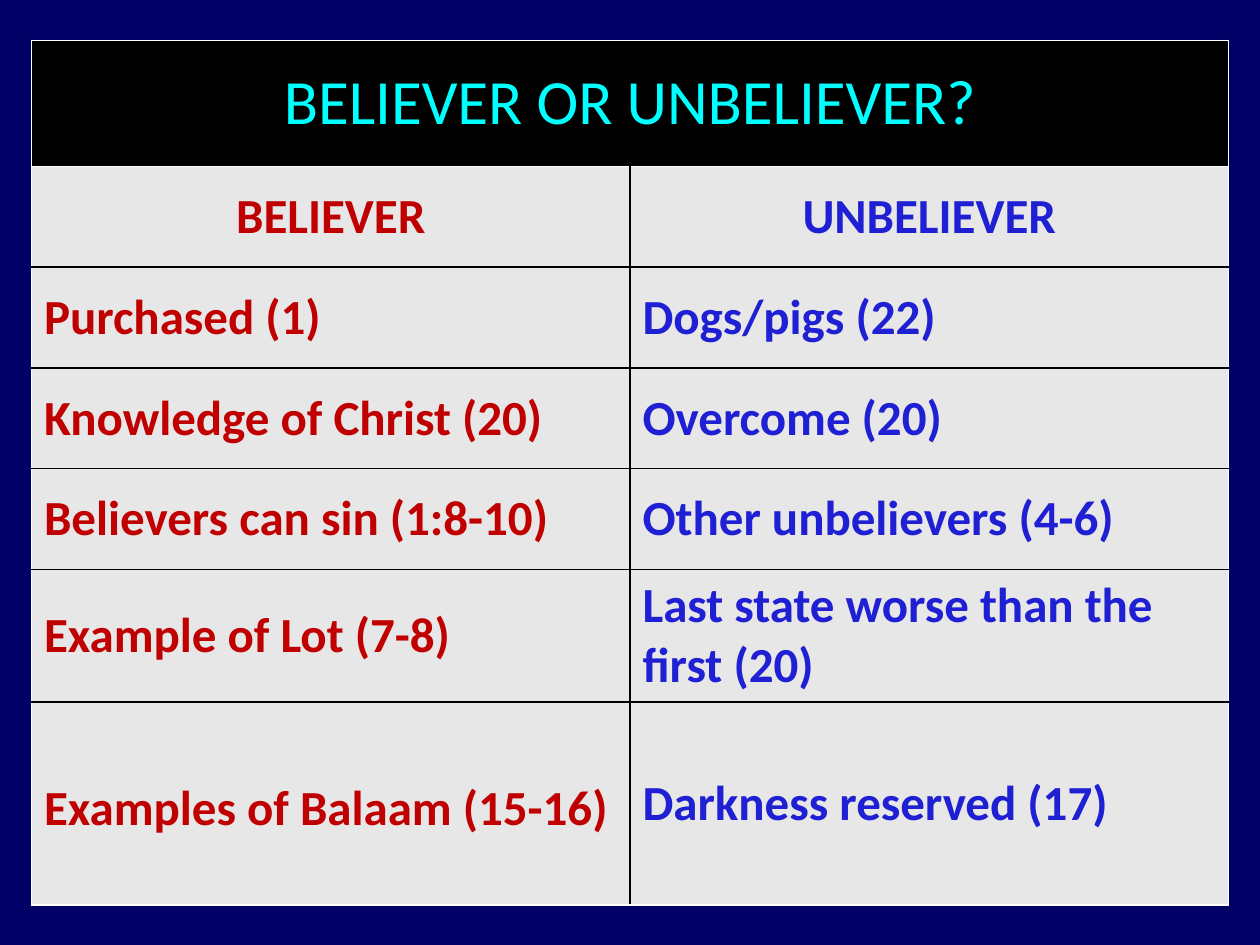
import lxml.etree
import pptx
import pptx.dml.color
import pptx.enum.text
import pptx.oxml.ns
import pptx.util

Inches = pptx.util.Inches
Pt = pptx.util.Pt
RGBColor = pptx.dml.color.RGBColor

NAVY = RGBColor(0x00, 0x00, 0x66)
BLACK = RGBColor(0x00, 0x00, 0x00)
WHITE = RGBColor(0xFF, 0xFF, 0xFF)
CYAN = RGBColor(0x00, 0xFF, 0xFF)
RED = RGBColor(0xC0, 0x00, 0x00)
BLUE = RGBColor(0x1F, 0x1F, 0xD3)
LIGHT_GRAY = RGBColor(0xE7, 0xE7, 0xE7)

TITLE = "BELIEVER OR UNBELIEVER?"
COMPARISONS = [
    ("BELIEVER", "UNBELIEVER"),
    ("Purchased (1)", "Dogs/pigs (22)"),
    ("Knowledge of Christ (20)", "Overcome (20)"),
    ("Believers can sin (1:8-10)", "Other unbelievers (4-6)"),
    ("Example of Lot (7-8)", "Last state worse than the first (20)"),
    ("Examples of Balaam (15-16)", "Darkness reserved (17)"),
]
ROW_HEIGHTS = [1, 0.8, 0.8, 0.8, 0.8, 1.05, 1.61]


def set_borders(cell, left, right, top, bottom):
    properties = cell._tc.get_or_add_tcPr()
    for side, color in zip("LRTB", (left, right, top, bottom)):
        line = lxml.etree.SubElement(
            properties, pptx.oxml.ns.qn(f"a:ln{side}"), w=str(Pt(1))
        )
        fill = lxml.etree.SubElement(line, pptx.oxml.ns.qn("a:solidFill"))
        lxml.etree.SubElement(fill, pptx.oxml.ns.qn("a:srgbClr"), val=str(color))


def fill_cell(cell, text, size, color, background, bold, centered):
    cell.fill.solid()
    cell.fill.fore_color.rgb = background
    cell.vertical_anchor = pptx.enum.text.MSO_ANCHOR.MIDDLE
    cell.margin_left = cell.margin_right = Inches(0.1)
    cell.margin_top = cell.margin_bottom = Inches(0.05)
    paragraph = cell.text_frame.paragraphs[0]
    paragraph.text = text
    alignment = pptx.enum.text.PP_ALIGN
    paragraph.alignment = alignment.CENTER if centered else alignment.LEFT
    paragraph.font.name = "Calibri"
    paragraph.font.size = Pt(size)
    paragraph.font.bold = bold
    paragraph.font.color.rgb = color


def add_comparison_table(slide, left, top, width):
    table = slide.shapes.add_table(
        len(ROW_HEIGHTS), 2, left, top, width, Inches(sum(ROW_HEIGHTS))
    ).table
    for column in table.columns:
        column.width = width // 2
    for row, height in zip(table.rows, ROW_HEIGHTS):
        row.height = Inches(height)

    title_cell = table.cell(0, 0)
    title_cell.merge(table.cell(0, 1))
    for cell in table.rows[0].cells:
        set_borders(cell, WHITE, WHITE, WHITE, WHITE)
    fill_cell(title_cell, TITLE, 36, CYAN, BLACK, False, True)

    last = len(COMPARISONS)
    for row_index, texts in enumerate(COMPARISONS, start=1):
        top_color = WHITE if row_index == 1 else BLACK
        bottom_color = WHITE if row_index == last else BLACK
        for column_index, text in enumerate(texts):
            cell = table.cell(row_index, column_index)
            sides = (WHITE, BLACK) if column_index == 0 else (BLACK, WHITE)
            set_borders(cell, *sides, top_color, bottom_color)
            color = (RED, BLUE)[column_index]
            fill_cell(cell, text, 28, color, LIGHT_GRAY, True, row_index == 1)
    table.cell(last, 0).margin_top = Inches(0.13)


def main():
    presentation = pptx.Presentation()
    presentation.slide_width = Inches(10)
    presentation.slide_height = Inches(7.5)
    slide = presentation.slides.add_slide(presentation.slide_layouts[6])
    slide.background.fill.solid()
    slide.background.fill.fore_color.rgb = NAVY
    add_comparison_table(slide, Inches(0.25), Inches(0.32), Inches(9.5))
    presentation.save("out.pptx")


if __name__ == "__main__":
    main()
